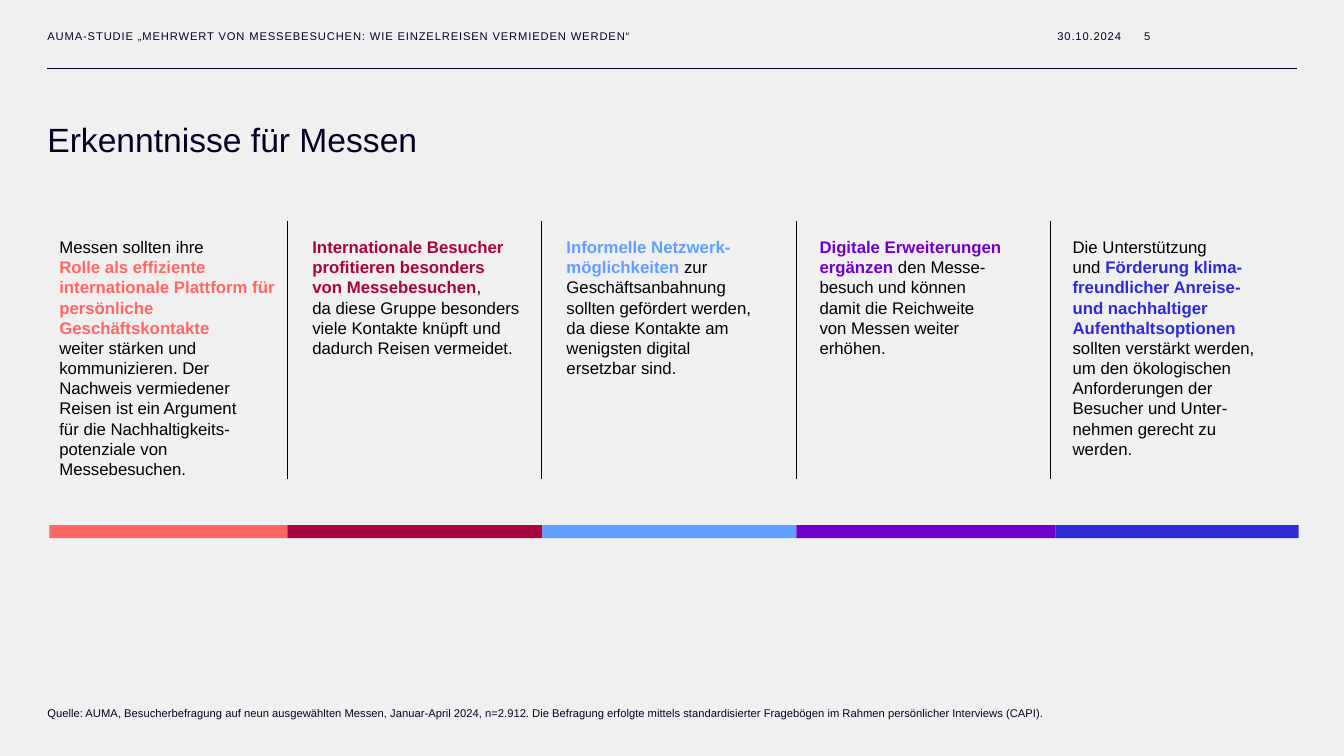
from dataclasses import dataclass
from itertools import pairwise

from lxml.etree import SubElement
from pptx import Presentation
from pptx.dml.color import RGBColor
from pptx.enum.shapes import MSO_CONNECTOR, MSO_SHAPE
from pptx.enum.text import MSO_ANCHOR, PP_ALIGN
from pptx.oxml.ns import qn
from pptx.shapes.autoshape import Shape
from pptx.slide import Slide
from pptx.text.text import _Paragraph as Paragraph
from pptx.util import Emu, Pt

EMU_PER_PX = 9144
BACKGROUND = RGBColor(0xF0, 0xF0, 0xF0)
NAVY = RGBColor(0x07, 0x00, 0x23)
BLACK = RGBColor(0x00, 0x00, 0x00)
CORAL = RGBColor(0xFF, 0x67, 0x67)
CRIMSON = RGBColor(0xAA, 0x03, 0x3F)
SKY = RGBColor(0x5F, 0x9F, 0xFF)
PURPLE = RGBColor(0x71, 0x00, 0xCA)
BLUE = RGBColor(0x2E, 0x2A, 0xD9)

COLUMN_TOP = 219
CARD_LEFT, CARD_STEP, CARD_WIDTH, CARD_HEIGHT = 49, 251.25, 234, 293
SEPARATOR_LEFT, SEPARATOR_STEP, SEPARATOR_BOTTOM = 285, 252.33, 475
BAR_TOP, BAR_HEIGHT = 521, 13
BAR_EDGES = (49, 285, 538, 790, 1047, 1288)


@dataclass(frozen=True)
class Label:
    text: str
    left: int
    top: int
    width: int
    height: int
    size: int = 8
    anchor: MSO_ANCHOR = MSO_ANCHOR.MIDDLE
    align: PP_ALIGN = PP_ALIGN.LEFT
    line_spacing: float | Pt = 1.0
    tracking: int = 0


@dataclass(frozen=True)
class Finding:
    color: RGBColor
    lead: str
    highlight: str
    rest: str


LABELS = (
    Label("AUMA-STUDIE „MEHRWERT VON MESSEBESUCHEN: WIE EINZELREISEN VERMIEDEN WERDEN“",
          47, 29, 928, 13, tracking=60),
    Label("30.10.2024", 1037, 29, 75, 13, align=PP_ALIGN.RIGHT, tracking=60),
    Label("5", 1111, 29, 30, 13, align=PP_ALIGN.RIGHT),
    Label("Erkenntnisse für Messen", 47, 123, 1239, 36, size=24,
          anchor=MSO_ANCHOR.BOTTOM, line_spacing=0.9),
    Label("Quelle: AUMA, Besucherbefragung auf neun ausgewählten Messen, Januar-April 2024, "
          "n=2.912. Die Befragung erfolgte mittels standardisierter Fragebögen im Rahmen "
          "persönlicher Interviews (CAPI).",
          47, 689, 1239, 25, anchor=MSO_ANCHOR.BOTTOM, line_spacing=Pt(21)),
)

FINDINGS = (
    Finding(CORAL, "Messen sollten ihre\n",
            "Rolle als effiziente internationale Plattform für persönliche Geschäftskontakte\n",
            "weiter stärken und kommunizieren. Der Nachweis vermiedener Reisen ist ein Argument\n"
            "für die Nachhaltigkeits-potenziale von Messebesuchen."),
    Finding(CRIMSON, "",
            "Internationale Besucher profitieren besonders\nvon Messebesuchen",
            ",\nda diese Gruppe besonders viele Kontakte knüpft und dadurch Reisen vermeidet."),
    Finding(SKY, "", "Informelle Netzwerk-möglichkeiten ",
            "zur Geschäftsanbahnung\nsollten gefördert werden,\n"
            "da diese Kontakte am wenigsten digital\nersetzbar sind."),
    Finding(PURPLE, "", "Digitale Erweiterungen ergänzen ",
            "den Messe-\nbesuch und können\ndamit die Reichweite\nvon Messen weiter\nerhöhen."),
    Finding(BLUE, "Die Unterstützung\nund ",
            "Förderung klima-freundlicher Anreise-\nund nachhaltiger Aufenthaltsoptionen ",
            "sollten verstärkt werden,\num den ökologischen Anforderungen der\n"
            "Besucher und Unter-\nnehmen gerecht zu\nwerden."),
)


def px(length: float) -> Emu:
    return Emu(round(length) * EMU_PER_PX)


def add_label(slide: Slide, label: Label) -> None:
    shape = slide.shapes.add_textbox(
        px(label.left), px(label.top), px(label.width), px(label.height))
    frame = shape.text_frame
    frame.word_wrap = True
    frame.vertical_anchor = label.anchor
    frame.margin_left = frame.margin_right = frame.margin_top = frame.margin_bottom = 0
    paragraph = frame.paragraphs[0]
    paragraph.text = label.text
    paragraph.alignment = label.align
    paragraph.line_spacing = label.line_spacing
    paragraph.font.name = "Arial"
    paragraph.font.size = Pt(label.size)
    paragraph.font.color.rgb = NAVY
    if label.tracking:
        for run in paragraph.runs:
            run.font._element.set("spc", str(label.tracking))


def add_line(slide: Slide, start: tuple[float, float], end: tuple[float, float],
             color: RGBColor, width: float) -> None:
    connector = slide.shapes.add_connector(
        MSO_CONNECTOR.STRAIGHT, px(start[0]), px(start[1]), px(end[0]), px(end[1]))
    connector.line.color.rgb = color
    connector.line.width = Pt(width)
    SubElement(connector._element.spPr, qn("a:effectLst"))


def add_rectangle(slide: Slide, left: float, top: int, width: int, height: int,
                  fill: RGBColor) -> Shape:
    shape = slide.shapes.add_shape(
        MSO_SHAPE.RECTANGLE, px(left), px(top), px(width), px(height))
    shape.shadow.inherit = False
    shape.fill.solid()
    shape.fill.fore_color.rgb = fill
    shape.line.fill.background()
    return shape


def add_passage(paragraph: Paragraph, text: str, color: RGBColor, bold: bool) -> None:
    for index, line in enumerate(text.split("\n")):
        if index:
            paragraph.add_line_break()
        if line:
            run = paragraph.add_run()
            run.text = line
            run.font.color.rgb = color
            run.font.bold = bold


def add_finding(slide: Slide, finding: Finding, left: float) -> None:
    card = add_rectangle(slide, left, COLUMN_TOP, CARD_WIDTH, CARD_HEIGHT, BACKGROUND)
    frame = card.text_frame
    frame.word_wrap = True
    frame.vertical_anchor = MSO_ANCHOR.TOP
    frame.margin_left = frame.margin_right = px(10)
    frame.margin_top, frame.margin_bottom = px(16), px(5)
    paragraph = frame.paragraphs[0]
    paragraph.alignment = PP_ALIGN.LEFT
    paragraph.font.name = "Arial"
    paragraph.font.size = Pt(12)
    add_passage(paragraph, finding.lead, BLACK, False)
    add_passage(paragraph, finding.highlight, finding.color, True)
    add_passage(paragraph, finding.rest, BLACK, False)


def main() -> None:
    presentation = Presentation()
    presentation.slide_width, presentation.slide_height = px(1333), px(750)
    slide = presentation.slides.add_slide(presentation.slide_layouts[6])
    slide.background.fill.solid()
    slide.background.fill.fore_color.rgb = BACKGROUND

    add_line(slide, (47, 68), (1286, 68), NAVY, 0.25)
    for label in LABELS:
        add_label(slide, label)
    for index, finding in enumerate(FINDINGS):
        add_finding(slide, finding, CARD_LEFT + index * CARD_STEP)
    for index in range(len(FINDINGS) - 1):
        left = SEPARATOR_LEFT + index * SEPARATOR_STEP
        add_line(slide, (left, COLUMN_TOP), (left, SEPARATOR_BOTTOM), BLACK, 0.5)
    for finding, (left, right) in zip(FINDINGS, pairwise(BAR_EDGES)):
        add_rectangle(slide, left, BAR_TOP, right - left, BAR_HEIGHT, finding.color)

    presentation.save("out.pptx")


if __name__ == "__main__":
    main()
